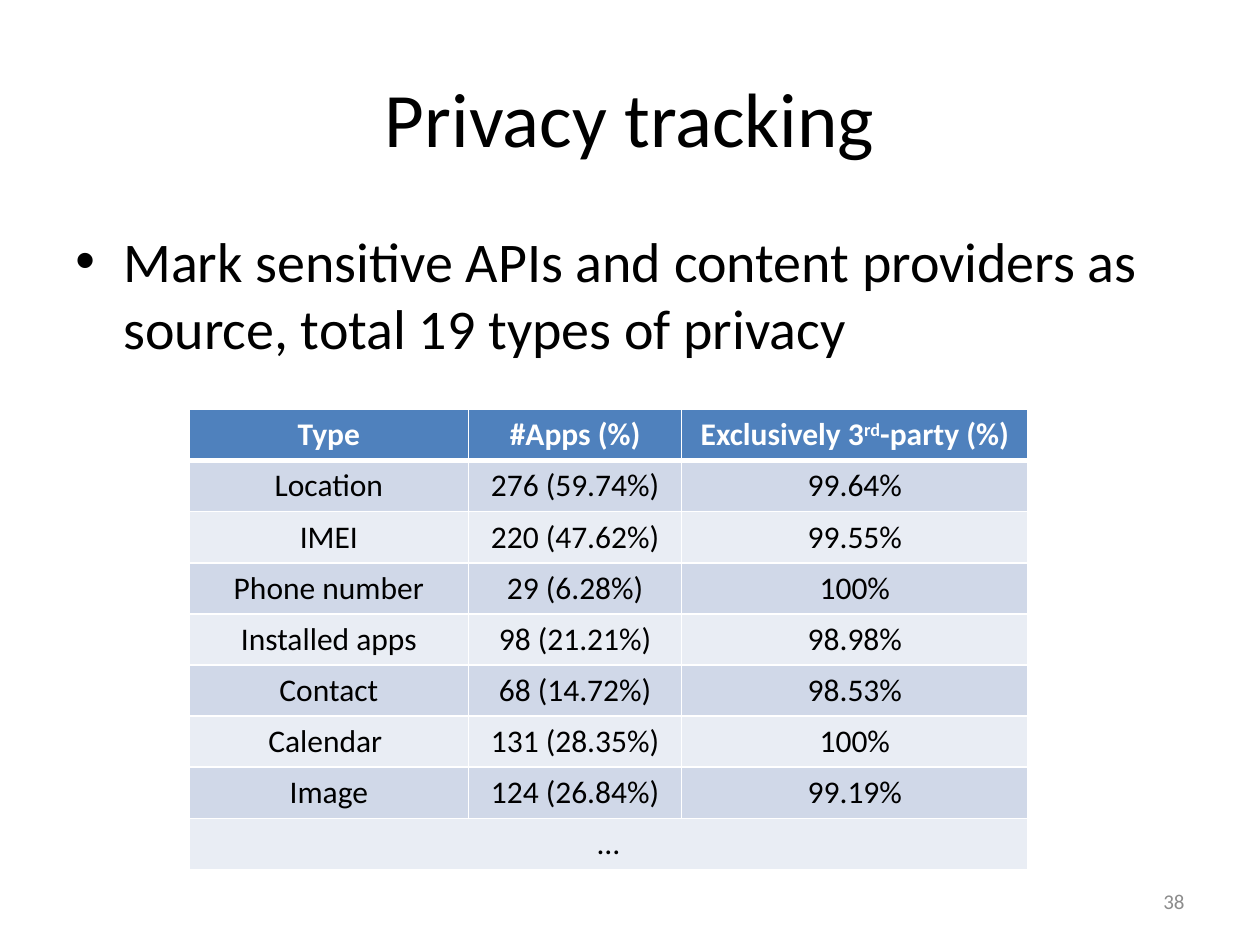
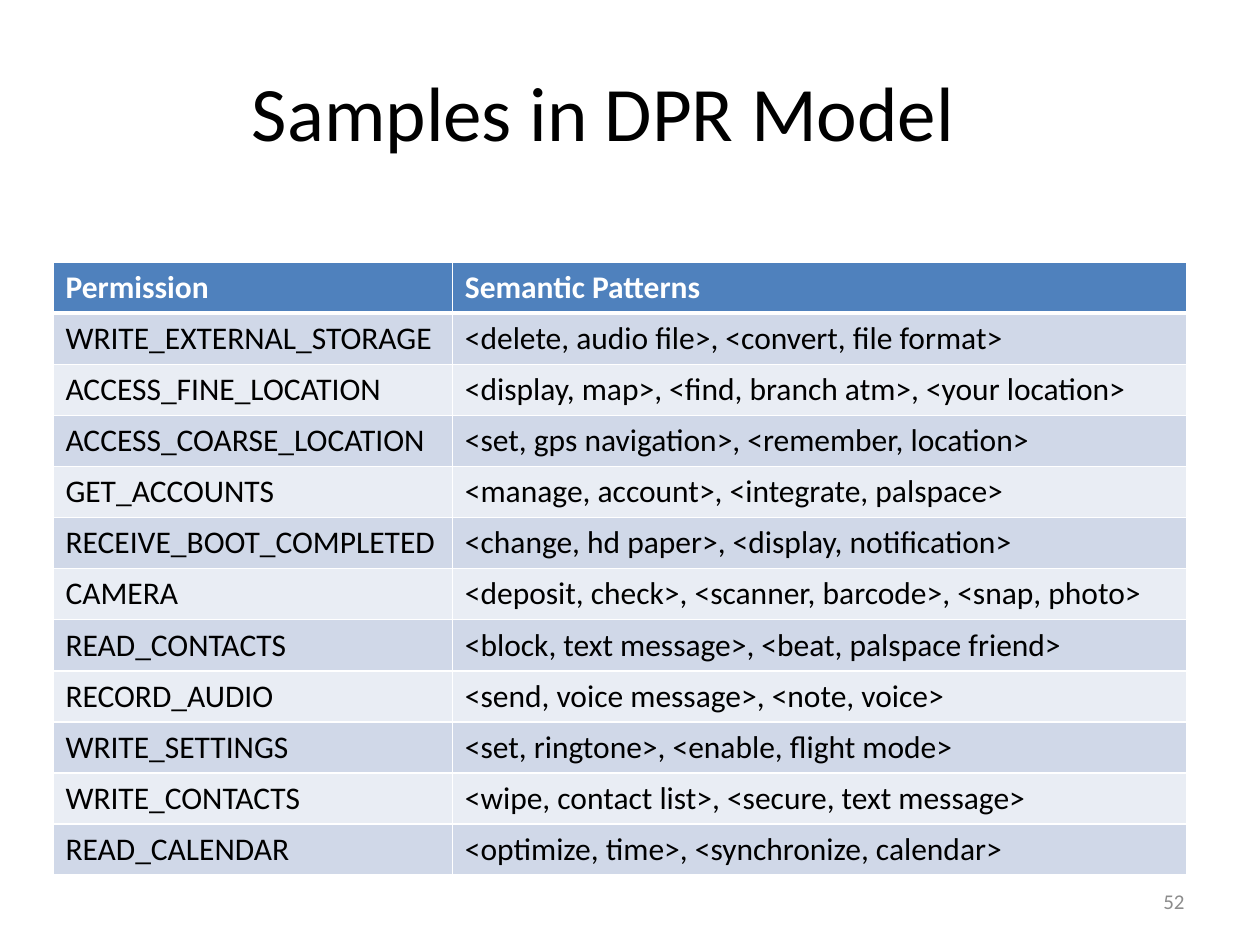
from dataclasses import dataclass

from lxml.etree import SubElement
from pptx import Presentation
from pptx.dml.color import RGBColor
from pptx.enum.text import MSO_ANCHOR, PP_ALIGN
from pptx.oxml import parse_xml
from pptx.oxml.ns import nsdecls, qn
from pptx.util import Inches, Pt


@dataclass(frozen=True)
class Theme:
    font: str = "Calibri"
    text: str = "000000"
    inverse: str = "FFFFFF"
    muted: str = "8C8C8C"
    header: str = "4F81BD"
    bands: tuple = ("D0D8E8", "E9EDF4")
    grid: str = "FFFFFF"
    grid_width: float = 1
    header_rule_width: float = 3
    title_size: int = 44
    body_size: int = 32
    table_size: int = 18
    number_size: int = 12


THEME = Theme()
PAGE_NUMBER_BOX = (7.17, 6.95, 2.33, 0.4)

PRIVACY_ROWS = [
    ("Type", "#Apps (%)", "Exclusively 3^rd^-party (%)"),
    ("Location", "276 (59.74%)", "99.64%"),
    ("IMEI", "220 (47.62%)", "99.55%"),
    ("Phone number", "29 (6.28%)", "100%"),
    ("Installed apps", "98 (21.21%)", "98.98%"),
    ("Contact", "68 (14.72%)", "98.53%"),
    ("Calendar ", "131 (28.35%)", "100%"),
    ("Image", "124 (26.84%)", "99.19%"),
    ("…",),
]

PERMISSION_ROWS = [
    ("Permission", "Semantic Patterns"),
    ("WRITE_EXTERNAL_STORAGE", "<delete, audio file>, <convert, file format>"),
    ("ACCESS_FINE_LOCATION", "<display, map>, <find, branch atm>, <your location>"),
    ("ACCESS_COARSE_LOCATION", "<set, gps navigation>, <remember, location>"),
    ("GET_ACCOUNTS", "<manage, account>, <integrate, palspace>"),
    ("RECEIVE_BOOT_COMPLETED", "<change, hd paper>, <display, notification>"),
    ("CAMERA", "<deposit, check>, <scanner, barcode>, <snap, photo>"),
    ("READ_CONTACTS", "<block, text message>, <beat, palspace friend>"),
    ("RECORD_AUDIO", "<send, voice message>, <note, voice>"),
    ("WRITE_SETTINGS", "<set, ringtone>, <enable, flight mode>"),
    ("WRITE_CONTACTS", "<wipe, contact list>, <secure, text message>"),
    ("READ_CALENDAR", "<optimize, time>, <synchronize, calendar>"),
]


def style_font(font, size, color, bold=False):
    font.name = THEME.font
    font.size = Pt(size)
    font.bold = bold
    font.color.rgb = RGBColor.from_string(color)


def add_text(slide, box, text, size, color, align, anchor=MSO_ANCHOR.MIDDLE):
    """Add a wrapped one-paragraph text box and return its paragraph."""
    frame = slide.shapes.add_textbox(*map(Inches, box)).text_frame
    frame.word_wrap = True
    frame.vertical_anchor = anchor
    frame.text = text
    paragraph = frame.paragraphs[0]
    paragraph.alignment = align
    style_font(paragraph.runs[0].font, size, color)
    return paragraph


def add_title(slide, box, text):
    add_text(slide, box, text, THEME.title_size, THEME.text, PP_ALIGN.CENTER)


def add_page_number(slide, number):
    add_text(slide, PAGE_NUMBER_BOX, str(number), THEME.number_size,
             THEME.muted, PP_ALIGN.RIGHT)


def add_bullet(slide, box, text, indent=0.38):
    paragraph = add_text(slide, box, text, THEME.body_size, THEME.text,
                         PP_ALIGN.LEFT, MSO_ANCHOR.TOP)
    properties = paragraph._p.get_or_add_pPr()
    properties.set("marL", str(Inches(indent)))
    properties.set("indent", str(-Inches(indent)))
    SubElement(properties, qn("a:buFont"), typeface="Arial")
    SubElement(properties, qn("a:buChar"), char="•")


def set_borders(cell, top, bottom):
    """Rule all four sides of a filled cell; top and bottom are in points."""
    side = THEME.grid_width
    widths = {"lnL": side, "lnR": side, "lnT": top, "lnB": bottom}
    properties = cell._tc.get_or_add_tcPr()
    for position, (tag, width) in enumerate(widths.items()):
        properties.insert(position, parse_xml(
            f'<a:{tag} {nsdecls("a")} w="{Pt(width)}"><a:solidFill>'
            f'<a:srgbClr val="{THEME.grid}"/></a:solidFill></a:{tag}>'))


def fill_cell(cell, text, row, align):
    """Write and style a cell; text between ^ marks is superscript."""
    is_header = row == 0
    fill = THEME.header if is_header else THEME.bands[(row - 1) % 2]
    cell.fill.solid()
    cell.fill.fore_color.rgb = RGBColor.from_string(fill)
    thick, thin = THEME.header_rule_width, THEME.grid_width
    set_borders(cell, top=thick if row == 1 else thin,
                bottom=thick if is_header else thin)
    paragraph = cell.text_frame.paragraphs[0]
    paragraph.alignment = align
    for index, piece in enumerate(text.split("^")):
        run = paragraph.add_run()
        run.text = piece
        style_font(run.font, THEME.table_size,
                   THEME.inverse if is_header else THEME.text, is_header)
        if index % 2:
            run._r.get_or_add_rPr().set("baseline", "30000")


def add_banded_table(slide, box, column_widths, rows, align):
    """Add a table with equal rows; a row of one text spans every column."""
    table = slide.shapes.add_table(len(rows), len(column_widths),
                                   *map(Inches, box)).table
    for column, width in zip(table.columns, column_widths):
        column.width = Inches(width)
    for row, texts in enumerate(rows):
        table.rows[row].height = Inches(box[3] / len(rows))
        if len(texts) == 1:
            table.cell(row, 0).merge(table.cell(row, len(column_widths) - 1))
        for column, text in enumerate(texts):
            fill_cell(table.cell(row, column), text, row, align)


def build_privacy_slide(slide):
    add_title(slide, (0.5, 0.3, 9, 1.25), "Privacy tracking")
    add_bullet(slide, (0.5, 1.75, 9, 4.95),
               "Mark sensitive APIs and content providers as source, "
               "total 19 types of privacy")
    add_page_number(slide, 38)
    add_banded_table(slide, (1.5, 3.25, 6.67, 3.65), (2.22, 1.69, 2.75),
                     PRIVACY_ROWS, PP_ALIGN.CENTER)


def build_permission_slide(slide):
    add_title(slide, (1.5, 0.25, 6.58, 1.25), "Samples in DPR Model")
    add_banded_table(slide, (0.42, 2.08, 9, 4.87), (3.17, 5.83),
                     PERMISSION_ROWS, PP_ALIGN.LEFT)
    add_page_number(slide, 52)


def main():
    deck = Presentation()
    deck.slide_width, deck.slide_height = Inches(10), Inches(7.5)
    blank = deck.slide_layouts[6]
    for build in (build_privacy_slide, build_permission_slide):
        build(deck.slides.add_slide(blank))
    deck.save("out.pptx")


if __name__ == "__main__":
    main()
